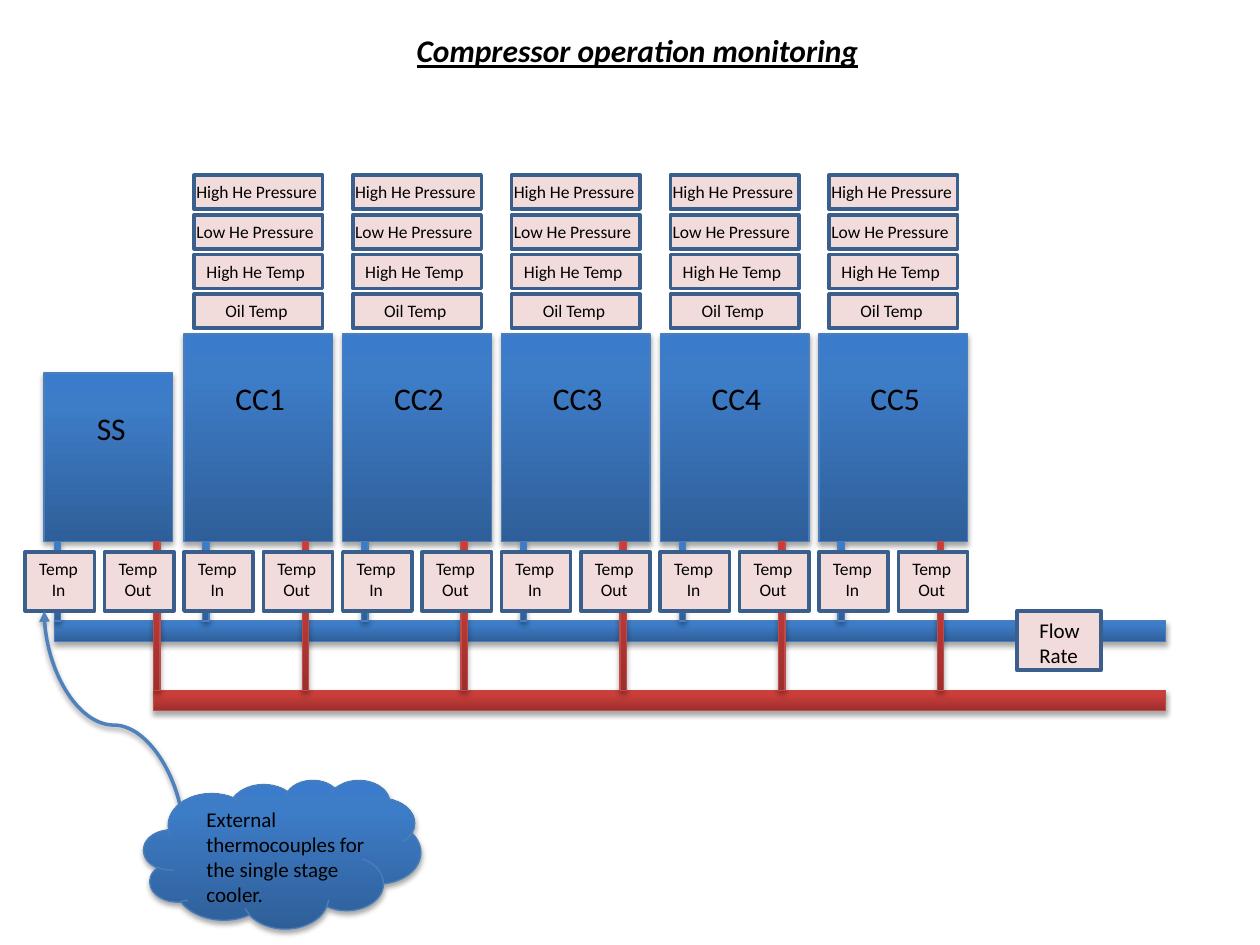
"""Builds the slide on compressor operation monitoring."""
from copy import deepcopy

from lxml.etree import SubElement as Sub
from pptx import Presentation
from pptx.dml.color import RGBColor as RGB
from pptx.enum.shapes import MSO_CONNECTOR as Conn, MSO_SHAPE as Geom
from pptx.enum.text import MSO_AUTO_SIZE as Fit, PP_ALIGN as Align
from pptx.oxml.ns import qn
from pptx.util import Inches, Pt

BLACK = RGB(0x00, 0x00, 0x00)
PINK = RGB(0xF2, 0xDC, 0xDB)
NAVY = RGB(0x3A, 0x5F, 0x8C)
CURVE = RGB(0x4F, 0x81, 0xBD)
BLUE = (RGB(0x2F, 0x5F, 0x99), RGB(0x3D, 0x7C, 0xC7), RGB(0x3A, 0x7C, 0xCB))
BLUE_EDGE = RGB(0x4B, 0x7E, 0xBC)
RED = (RGB(0x9C, 0x2F, 0x2D), RGB(0xCB, 0x3E, 0x3A), RGB(0xCE, 0x3B, 0x37))
RED_EDGE = RGB(0xBF, 0x4C, 0x48)
COLD, HOT = (BLUE, BLUE_EDGE), (RED, RED_EDGE)

LEFT, PITCH, BAYS = 0.2, 1.26, 5
READINGS = (
    ("High He Pressure", 0, 1.17),
    ("Low He Pressure", 0, 1.15),
    ("High He Temp", 0.08, 1.01),
    ("Oil Temp", 0.23, 0.71),
)


class Board:
    """Holds the slide and its style, and draws each kind of element."""

    def __init__(self, slide, font="Calibri"):
        self.items = slide.shapes
        self.font = font

    def shape(self, box, geom, edge, width):
        item = self.items.add_shape(geom, *map(Inches, box))
        item.shadow.inherit = False
        item.line.color.rgb = edge
        item.line.width = Pt(width)
        return item

    def shade(self, props, alpha, dist):
        effect = props.find(qn("a:effectLst"))
        if effect is None:
            effect = Sub(props, qn("a:effectLst"))
        outer = Sub(effect, qn("a:outerShdw"), blurRad="40000", dist=str(dist),
                    dir="5400000", rotWithShape="0")
        color = Sub(outer, qn("a:srgbClr"), val=str(BLACK))
        Sub(color, qn("a:alpha"), val=str(alpha * 1000))

    def solid(self, box, tone, geom=Geom.RECTANGLE):
        colors, edge = tone
        item = self.shape(box, geom, edge, 0.75)
        item.fill.gradient()
        item.fill.gradient_angle = 90
        props = item._element.spPr
        stops = props.find(".//" + qn("a:gsLst"))
        stops.append(deepcopy(stops[-1]))
        for stop, place, color in zip(item.fill.gradient_stops, (0, 0.8, 1), colors):
            stop.position = place
            stop.color.rgb = color
        self.shade(props, 35, 23000)

    def panel(self, box):
        item = self.shape(box, Geom.RECTANGLE, NAVY, 2)
        item.fill.solid()
        item.fill.fore_color.rgb = PINK

    def text(self, box, lines, size, wrap=False, align=Align.LEFT, title=False):
        frame = self.items.add_textbox(*map(Inches, box)).text_frame
        frame.word_wrap = wrap
        frame.auto_size = Fit.SHAPE_TO_FIT_TEXT
        frame.text = lines
        for para in frame.paragraphs:
            para.alignment = align
            font = para.font
            font.name, font.size, font.color.rgb = self.font, Pt(size), BLACK
            if title:
                font.bold = font.italic = font.underline = True
        return frame

    def curve(self, start, end):
        (x1, y1), (x2, y2) = start, end
        mid_x, mid_y = (x1 + x2) / 2, (y1 + y2) / 2
        half_w, half_h = (y2 - y1) / 2, (x2 - x1) / 2
        link = self.items.add_connector(
            Conn.CURVE, Inches(mid_x + half_w), Inches(mid_y - half_h),
            Inches(mid_x - half_w), Inches(mid_y + half_h))
        link.line.color.rgb = CURVE
        link.line.width = Pt(2)
        props = link._element.spPr
        props.find(qn("a:xfrm")).set("rot", "16200000")
        Sub(props.find(qn("a:ln")), qn("a:headEnd"), type="triangle")
        self.shade(props, 38, 20000)


def main():
    deck = Presentation()
    deck.slide_width, deck.slide_height = Inches(10), Inches(7.5)
    board = Board(deck.slides.add_slide(deck.slide_layouts[6]))

    cells = [LEFT + PITCH * n for n in range(BAYS + 1)]
    bays = cells[1:]

    board.solid((0.35, 2.96, 1.02, 1.34), COLD)
    for x in bays:
        board.solid((x, 2.65, 1.18, 1.65), COLD)
    board.solid((0.43, 4.93, 8.82, 0.16), COLD)
    board.solid((1.22, 5.48, 8.03, 0.16), HOT)
    for x in [0.43] + [x + 0.15 for x in bays]:
        board.solid((x, 4.3, 0.05, 0.63), COLD)
    for x in [1.22] + [x + 0.94 for x in bays]:
        board.solid((x, 4.3, 0.05, 1.18), HOT)

    board.text((0.67, 3.2, 0.43, 0.4), "SS", 18)
    for n, x in enumerate(bays, 1):
        board.text((x + 0.31, 2.96, 0.6, 0.4), f"CC{n}", 18)

    for x in cells:
        for shift, way in ((0, "In"), (0.63, "Out")):
            board.panel((x + shift, 4.38, 0.55, 0.47))
            board.text((x + shift, 4.38, 0.53, 0.44), f"Temp\n{way}", 10,
                       align=Align.CENTER)

    board.panel((8.07, 4.85, 0.67, 0.47))
    board.text((8.15, 4.85, 0.55, 0.5), "Flow\nRate", 12, wrap=True)

    for x in bays:
        for row, (label, shift, width) in enumerate(READINGS):
            y = 1.39 + 0.315 * row
            board.panel((x + 0.08, y, 1.02, 0.27))
            board.text((x + shift, y, width, 0.27), label, 10)

    board.curve((0.35, 4.85), (1.46, 6.66))
    board.solid((1.14, 6.19, 2.2, 1.18), COLD, Geom.CLOUD)
    board.text((1.54, 6.35, 1.5, 0.91),
               "External thermocouples for the single stage cooler.", 12, wrap=True)

    head = board.text((0.39, 0.21, 9.34, 0.37), "Compressor operation monitoring",
                      18, wrap=True, align=Align.CENTER, title=True)
    head.margin_left = head.margin_right = Inches(0.07)
    head.margin_top = head.margin_bottom = Inches(0.04)

    deck.save("out.pptx")


if __name__ == "__main__":
    main()
